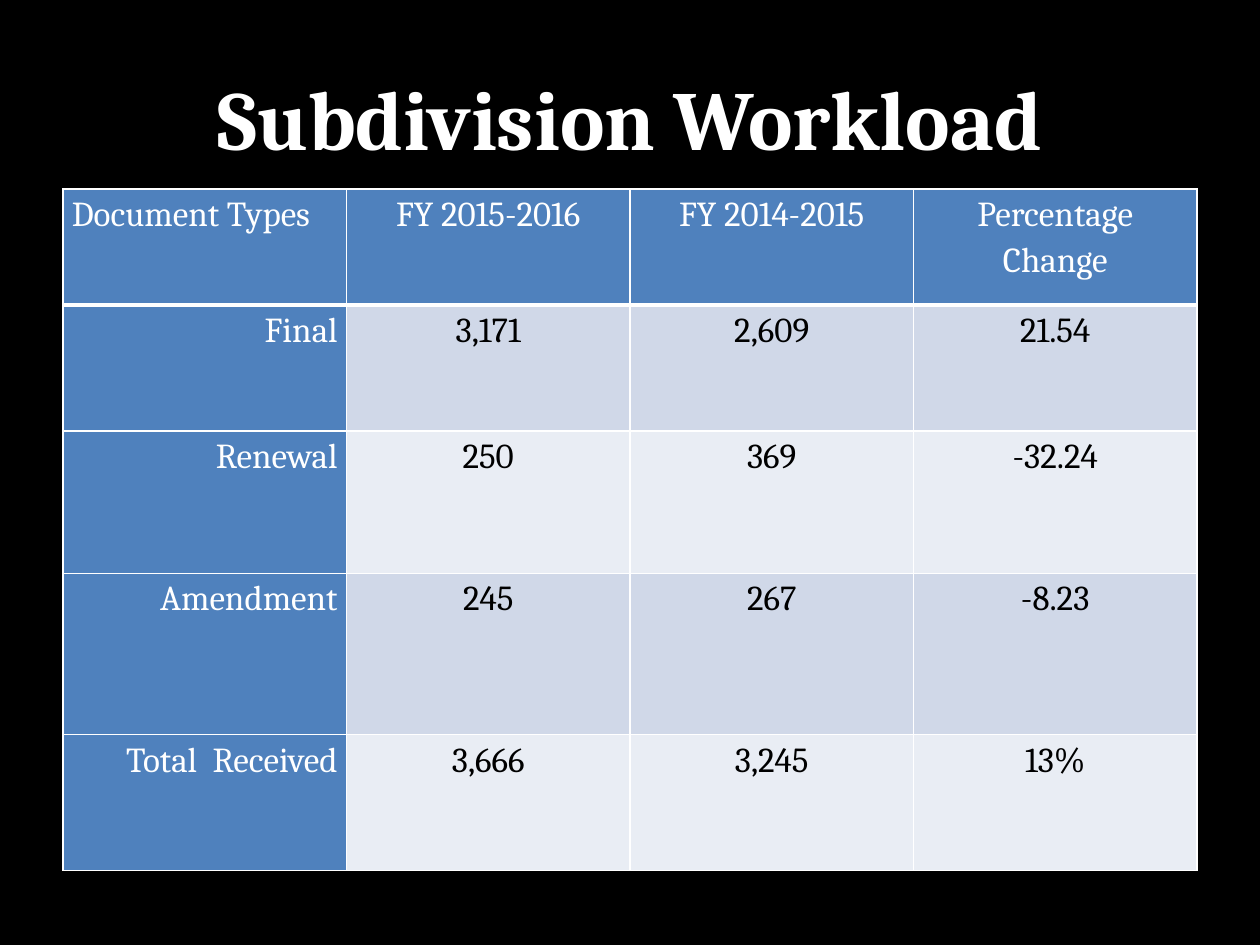
import pptx
import pptx.util
import pptx.dml.color
import pptx.enum.text
import pptx.oxml.ns
from lxml import etree

Inches = pptx.util.Inches
Pt = pptx.util.Pt
ALIGN = pptx.enum.text.PP_ALIGN
ANCHOR = pptx.enum.text.MSO_ANCHOR

FONT = "Cambria"
HUES = {
    "back": "000000",
    "light": "FFFFFF",
    "dark": "000000",
    "head": "4F81BD",
    "odd": "D0D8E8",
    "even": "E9EDF4",
}
ROWS = [
    ["Document Types", "FY 2015-2016", "FY 2014-2015", "Percentage Change"],
    ["Final", "3,171", "2,609", "21.54"],
    ["Renewal", "250", "369", "-32.24"],
    ["Amendment", "245", "267", "-8.23"],
    ["Total  Received", "3,666", "3,245", "13%"],
]
TALL = [0.92, 1, 1.13, 1.28, 1.08]
WIDE = 2.25


def paint(fill, hue):
    fill.solid()
    fill.fore_color.rgb = pptx.dml.color.RGBColor.from_string(HUES[hue])


def write(frame, text, size, hue, align, bold=False):
    para = frame.paragraphs[0]
    para.alignment = align
    run = para.add_run()
    run.text = text
    run.font.name = FONT
    run.font.size = Pt(size)
    run.font.bold = bold
    run.font.color.rgb = pptx.dml.color.RGBColor.from_string(HUES[hue])
    return para


def edge(cell, side, width):
    qn = pptx.oxml.ns.qn
    props = cell._tc.get_or_add_tcPr()
    line = etree.SubElement(props, qn("a:ln" + side), w=str(Pt(width)))
    fill = etree.SubElement(line, qn("a:solidFill"))
    etree.SubElement(fill, qn("a:srgbClr"), val=HUES["light"])


def add_title(slide):
    box = slide.shapes.add_textbox(Inches(0.5), Inches(0.3), Inches(9), Inches(1.25))
    frame = box.text_frame
    frame.word_wrap = True
    frame.vertical_anchor = ANCHOR.MIDDLE
    write(frame, "Subdivision Workload", 48, "light", ALIGN.CENTER, True)


def fill_cell(cell, text, row, col):
    head = row == 0 or col == 0
    # Borders come before the fill in the cell's XML
    for side in "LRTB":
        edge(cell, side, 3 if row == 0 and side == "B" else 1)
    paint(cell.fill, "head" if head else "odd" if row % 2 else "even")
    cell.margin_left = cell.margin_right = Inches(0.07)
    cell.margin_top = cell.margin_bottom = 0
    if col:
        align = ALIGN.CENTER
    else:
        align = ALIGN.RIGHT if row else ALIGN.LEFT
    para = write(cell.text_frame, text, 20, "light" if head else "dark", align)
    para.line_spacing = 1.15


def add_grid(slide):
    count = len(ROWS[0])
    grid = slide.shapes.add_table(
        len(ROWS), count, Inches(0.5), Inches(1.5),
        Inches(WIDE * count), Inches(sum(TALL))).table
    for col in grid.columns:
        col.width = Inches(WIDE)
    for row, texts in enumerate(ROWS):
        grid.rows[row].height = Inches(TALL[row])
        for col, text in enumerate(texts):
            fill_cell(grid.cell(row, col), text, row, col)


def main():
    deck = pptx.Presentation()
    deck.slide_width = Inches(10)
    deck.slide_height = Inches(7.5)
    slide = deck.slides.add_slide(deck.slide_layouts[6])
    paint(slide.background.fill, "back")
    # Heading, then the workload table
    add_title(slide)
    add_grid(slide)
    deck.save("out.pptx")


if __name__ == "__main__":
    main()
